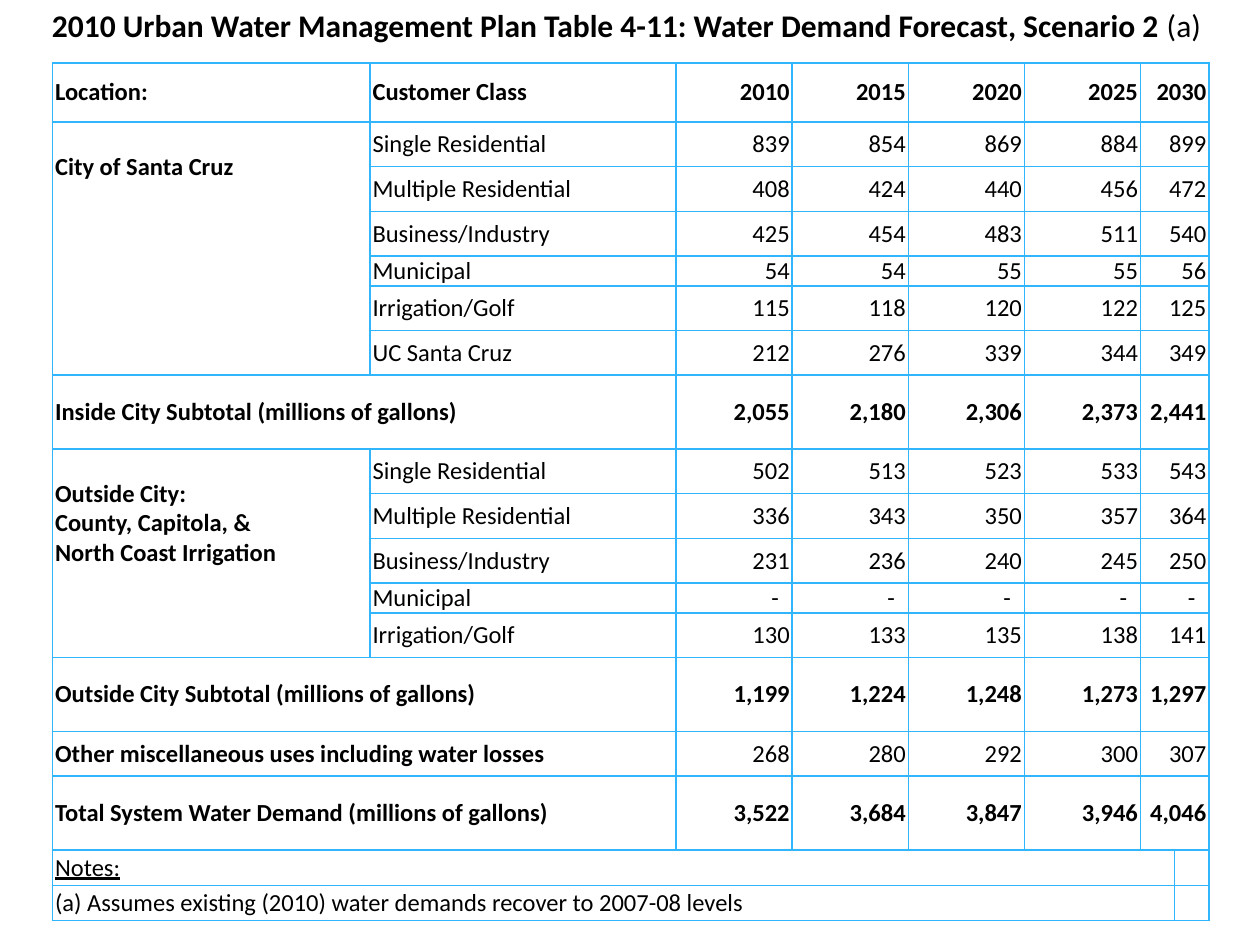
from dataclasses import dataclass

from lxml import etree
from pptx import Presentation
from pptx.dml.color import RGBColor
from pptx.enum.text import MSO_ANCHOR, PP_ALIGN
from pptx.oxml.ns import qn
from pptx.table import Table, _Cell
from pptx.text.text import _Paragraph
from pptx.util import Cm, Pt

TOP, MIDDLE = MSO_ANCHOR.TOP, MSO_ANCHOR.MIDDLE
LEFT, RIGHT, CENTER = PP_ALIGN.LEFT, PP_ALIGN.RIGHT, PP_ALIGN.CENTER


@dataclass(frozen=True)
class Theme:
    font: str = "Calibri"
    title: int = 18
    body: int = 14
    ink: str = "000000"
    rule: str = "31B6FD"
    width: int = 1


@dataclass(frozen=True)
class Row:
    label: str
    values: tuple[str, ...] = ()
    height: float = 0.9
    bold: bool = False
    heavy: bool = False  # bold label


@dataclass(frozen=True)
class Group:
    """A block of customer classes beside one merged place cell."""
    place: str
    start: int
    count: int


THEME = Theme()
SMALL, LARGE, HEAD = 0.6, 1.49, 1.19
PAD, DASH_PAD, PLACE_PAD = 0.05, 0.27, 0.6
WIDTHS = (6.4, 6.17, *[2.34] * 4, 0.69, 0.69)


def row(label: str, values: str, height: float = 0.9,
        bold: bool = False, heavy: bool = False) -> Row:
    return Row(label, tuple(values.split()), height, bold, bold or heavy)


ROWS = (
    row("Customer Class", "2010 2015 2020 2025 2030", HEAD, bold=True),
    row("Single Residential", "839 854 869 884 899"),
    row("Multiple Residential", "408 424 440 456 472"),
    row("Business/Industry", "425 454 483 511 540"),
    row("Municipal", "54 54 55 55 56", SMALL),
    row("Irrigation/Golf", "115 118 120 122 125"),
    row("UC Santa Cruz", "212 276 339 344 349"),
    row("Inside City Subtotal (millions of gallons)",
        "2,055 2,180 2,306 2,373 2,441", LARGE, bold=True),
    row("Single Residential", "502 513 523 533 543"),
    row("Multiple Residential", "336 343 350 357 364"),
    row("Business/Industry", "231 236 240 245 250"),
    row("Municipal", "- - - - -", SMALL),
    row("Irrigation/Golf", "130 133 135 138 141"),
    row("Outside City Subtotal (millions of gallons)",
        "1,199 1,224 1,248 1,273 1,297", LARGE, bold=True),
    row("Other miscellaneous uses including water losses",
        "268 280 292 300 307", heavy=True),
    row("Total System Water Demand (millions of gallons)",
        "3,522 3,684 3,847 3,946 4,046", LARGE, bold=True),
    row("Notes:", "", SMALL),
    row("(a) Assumes existing (2010) water demands recover to 2007-08 levels",
        "", SMALL),
)
GROUPS = (
    Group("Location:", 0, 1),
    Group("City of Santa Cruz", 1, 6),
    Group("Outside City:\nCounty, Capitola, &\nNorth Coast Irrigation", 8, 5),
)


def add_run(para: _Paragraph, text: str, size: int, bold: bool = False,
            under: bool = False) -> None:
    run = para.add_run()
    run.text = text
    font = run.font
    font.name, font.size = THEME.font, Pt(size)
    font.bold, font.underline = bold, under
    font.color.rgb = RGBColor.from_string(THEME.ink)


def frame(cell: _Cell) -> None:
    """Rule all four sides of a cell and leave it unfilled."""
    props = cell._tc.get_or_add_tcPr()
    for side in ("a:lnL", "a:lnR", "a:lnT", "a:lnB"):
        line = etree.SubElement(props, qn(side), w=str(Pt(THEME.width)))
        fill = etree.SubElement(line, qn("a:solidFill"))
        etree.SubElement(fill, qn("a:srgbClr"), val=THEME.rule)
    cell.fill.background()


def write(cell: _Cell, text: str, bold: bool = False, under: bool = False,
          align: PP_ALIGN = LEFT) -> None:
    cell.vertical_anchor = MIDDLE
    cell.margin_left = cell.margin_right = Cm(PAD)
    cell.margin_top = cell.margin_bottom = 0
    box = cell.text_frame
    for i, line in enumerate(text.split("\n")):
        para = box.add_paragraph() if i else box.paragraphs[0]
        para.alignment = align
        add_run(para, line, THEME.body, bold, under)


def fill_row(table: Table, index: int, item: Row, inner: bool) -> None:
    """Write one row; inner rows keep their first column for a place."""
    def cell(col: int) -> _Cell:
        return table.cell(index, col)

    if item.values:
        cell(6).merge(cell(7))
        if not inner:
            cell(0).merge(cell(1))
    else:
        cell(0).merge(cell(6))
        write(cell(7), "")
    write(cell(1 if inner else 0), item.label, item.heavy,
          under=item.label == "Notes:")
    for col, value in enumerate(item.values, 2):
        write(cell(col), value, item.bold, align=RIGHT)
        if value == "-":
            cell(col).margin_right = Cm(DASH_PAD)


def add_forecast(slide) -> None:
    heights = [item.height for item in ROWS]
    table = slide.shapes.add_table(
        len(ROWS), len(WIDTHS), Cm(1.06), Cm(1.27),
        Cm(sum(WIDTHS)), Cm(sum(heights))).table
    table.first_row = table.horz_banding = False
    for col, width in zip(table.columns, WIDTHS):
        col.width = Cm(width)
    for line, height in zip(table.rows, heights):
        line.height = Cm(height)
    for cell in table.iter_cells():
        frame(cell)

    inner = {g.start + i for g in GROUPS for i in range(g.count)}
    for index, item in enumerate(ROWS):
        fill_row(table, index, item, index in inner)
    for group in GROUPS:
        cell = table.cell(group.start, 0)
        write(cell, group.place, bold=True)
        if group.count > 1:
            cell.merge(table.cell(group.start + group.count - 1, 0))
            cell.vertical_anchor = TOP
            cell.margin_top = Cm(PLACE_PAD)


def add_title(slide) -> None:
    title = slide.shapes.title
    title.left, title.top, title.width, title.height = 0, 0, Cm(25.4), Cm(1.8)
    box = title.text_frame
    box.vertical_anchor, box.word_wrap = TOP, True
    para = box.paragraphs[0]
    para.alignment = CENTER
    add_run(para, "2010 Urban Water Management Plan Table 4-11: "
            "Water Demand Forecast, Scenario 2 ", THEME.title, bold=True)
    add_run(para, "(a) ", THEME.title)


def main() -> None:
    deck = Presentation()
    deck.slide_width, deck.slide_height = Cm(25.4), Cm(19.05)
    slide = deck.slides.add_slide(deck.slide_layouts[5])
    add_forecast(slide)
    add_title(slide)
    deck.save("out.pptx")


if __name__ == "__main__":
    main()
